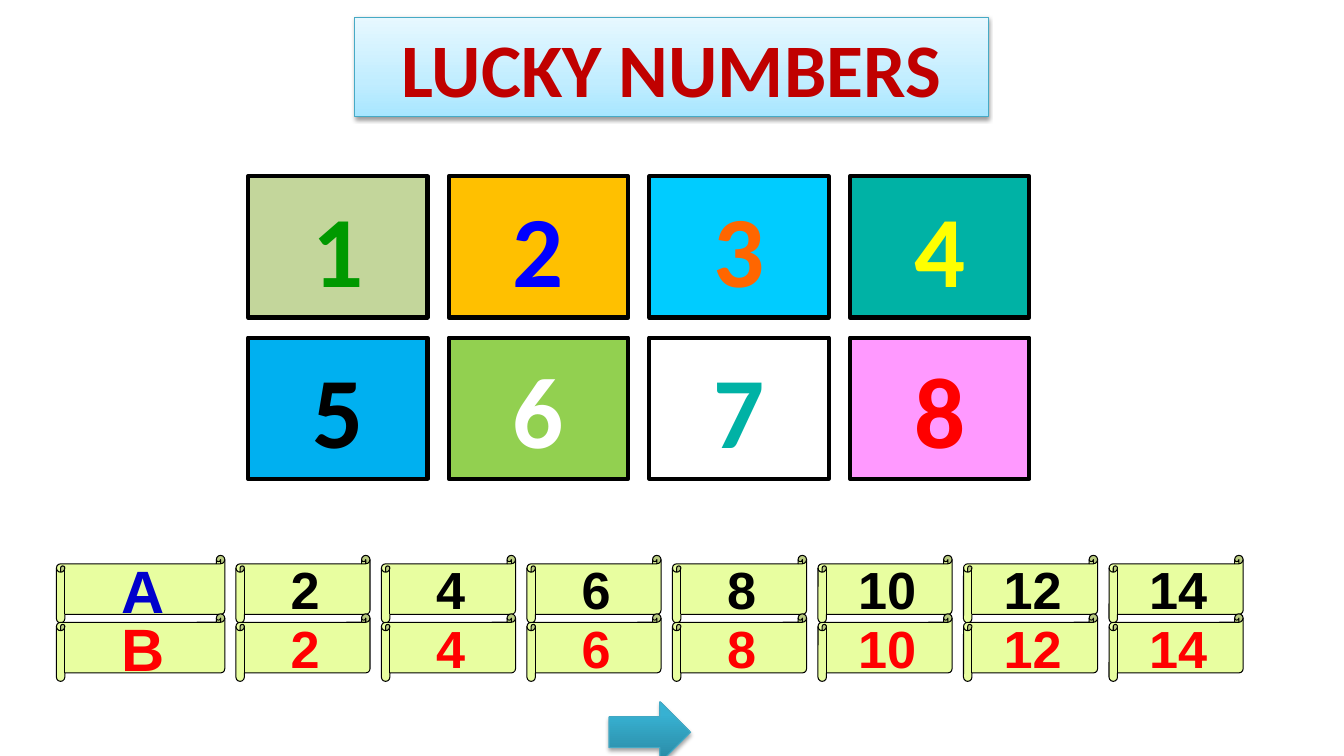
from lxml import etree
from pptx import Presentation
from pptx.dml.color import RGBColor
from pptx.enum.shapes import MSO_SHAPE
from pptx.enum.text import MSO_ANCHOR, PP_ALIGN
from pptx.oxml.ns import qn
from pptx.util import Inches, Pt

RECT = MSO_SHAPE.RECTANGLE
SCROLL = MSO_SHAPE.HORIZONTAL_SCROLL
ARROW = MSO_SHAPE.RIGHT_ARROW
CENTER = PP_ALIGN.CENTER
MIDDLE = MSO_ANCHOR.MIDDLE

BLACK = RGBColor(0x00, 0x00, 0x00)
WHITE = RGBColor(0xFF, 0xFF, 0xFF)
RED = RGBColor(0xFF, 0x00, 0x00)
CRIMSON = RGBColor(0xC0, 0x00, 0x00)
YELLOW = RGBColor(0xFF, 0xFF, 0x00)
ORANGE = RGBColor(0xFF, 0x66, 0x00)
AMBER = RGBColor(0xFF, 0xC0, 0x00)
GREEN = RGBColor(0x00, 0x99, 0x00)
LIME = RGBColor(0x92, 0xD0, 0x50)
SAGE = RGBColor(0xC3, 0xD6, 0x9B)
TEAL = RGBColor(0x00, 0xB2, 0xA5)
BLUE = RGBColor(0x00, 0x00, 0xFF)
NAVY = RGBColor(0x00, 0x00, 0xCC)
SKY = RGBColor(0x00, 0xCC, 0xFF)
AZURE = RGBColor(0x00, 0xB0, 0xF0)
PINK = RGBColor(0xFF, 0x99, 0xFF)
PAPER = RGBColor(0xE8, 0xFE, 0xA0)
EDGE = RGBColor(0x46, 0xAA, 0xC5)
ICE = [(0, RGBColor(0xA7, 0xE6, 0xFF)), (35, RGBColor(0xC1, 0xED, 0xFF)),
       (100, RGBColor(0xE7, 0xF8, 0xFF))]
SEA = [(0, RGBColor(0x2A, 0x88, 0xA2)), (80, RGBColor(0x37, 0xB1, 0xD2)),
       (100, RGBColor(0x34, 0xB4, 0xD6))]

CARDS = [("1", SAGE, GREEN), ("2", AMBER, BLUE), ("3", SKY, ORANGE), ("4", TEAL, YELLOW),
         ("5", AZURE, BLACK), ("6", LIME, WHITE), ("7", WHITE, TEAL), ("8", PINK, RED)]
TEAMS = [("A", NAVY, BLACK), ("B", RED, RED)]
SCORES = range(2, 15, 2)


class Board:
    """Draws the parts of the game board on one slide."""

    def __init__(self, slide):
        self.slide = slide

    def shape(self, kind, box, line, width):
        shape = self.slide.shapes.add_shape(kind, *[Inches(v) for v in box])
        shape.shadow.inherit = False
        shape.line.color.rgb = line
        shape.line.width = Pt(width)
        return shape

    def flat(self, kind, box, fill, width):
        shape = self.shape(kind, box, BLACK, width)
        shape.fill.solid()
        shape.fill.fore_color.rgb = fill
        return shape

    def glossy(self, kind, box, stops, alpha, dist):
        shape = self.shape(kind, box, EDGE, 0.75)
        shape.fill.gradient()
        shape.fill.gradient_angle = 90
        props = shape._element.spPr
        ramp = props.find(".//" + qn("a:gsLst"))
        for old in list(ramp):
            ramp.remove(old)
        for pos, color in stops:
            stop = etree.SubElement(ramp, qn("a:gs"), pos=str(pos * 1000))
            etree.SubElement(stop, qn("a:srgbClr"), val=str(color))
        shade = etree.SubElement(
            props.find(qn("a:effectLst")), qn("a:outerShdw"), blurRad=str(Pt(3.1)),
            dist=str(Pt(dist)), dir="5400000", rotWithShape="0")
        tint = etree.SubElement(shade, qn("a:srgbClr"), val=str(BLACK))
        etree.SubElement(tint, qn("a:alpha"), val=str(alpha * 1000))
        return shape

    def label(self, shape, text, font, size, color, wrap=False):
        frame = shape.text_frame
        frame.text = text
        frame.word_wrap = wrap
        frame.vertical_anchor = MIDDLE
        frame.margin_left = frame.margin_right = Inches(0.13)
        frame.margin_top = frame.margin_bottom = Inches(0.07)
        para = frame.paragraphs[0]
        para.alignment = CENTER
        style = para.runs[0].font
        style.name = font
        style.size = Pt(size)
        style.bold = True
        style.color.rgb = color

    def title(self, text, box):
        shape = self.glossy(RECT, box, ICE, 38, 1.6)
        self.label(shape, text, "Calibri", 54, CRIMSON, True)

    def card(self, text, box, fill, color):
        shape = self.flat(RECT, box, fill, 3)
        self.label(shape, text, "Calibri", 72, color)

    def scroll(self, text, box, size, color):
        shape = self.flat(SCROLL, box, PAPER, 0.75)
        self.label(shape, text, "Arial", size, color)

    def arrow(self, box):
        self.glossy(ARROW, box, SEA, 35, 1.8)


def main():
    deck = Presentation()
    deck.slide_width = Inches(13.33)
    deck.slide_height = Inches(7.5)
    board = Board(deck.slides.add_slide(deck.slide_layouts[6]))

    board.title("LUCKY NUMBERS", (3.52, 0.17, 6.28, 0.99))
    for i, (text, fill, color) in enumerate(CARDS):
        row, col = divmod(i, 4)
        board.card(text, (2.46 + 1.99 * col, 1.75 + 1.6 * row, 1.78, 1.4), fill, color)

    step = (11 - 2.34) / (len(SCORES) - 1)
    for row, (team, color, ink) in enumerate(TEAMS):
        top = 5.51 + 0.58 * row
        board.scroll(team, (0.56, top, 1.67, 0.67), 42.7, color)
        for col, score in enumerate(SCORES):
            board.scroll(str(score), (2.34 + step * col, top, 1.33, 0.67), 37.3, ink)

    board.arrow((6.04, 6.96, 0.81, 0.61))
    deck.save("out.pptx")


if __name__ == "__main__":
    main()
